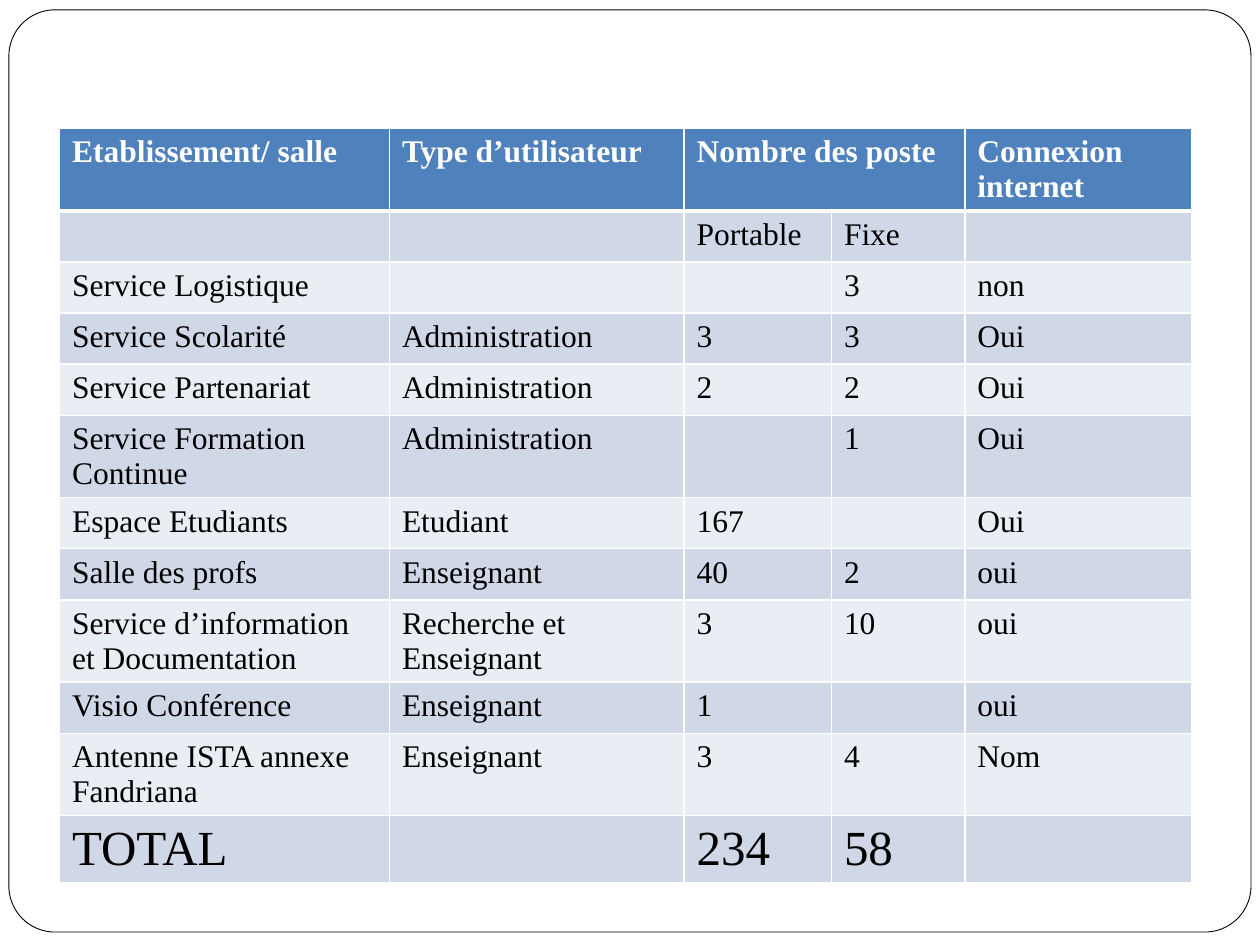
from dataclasses import dataclass

from lxml import etree
from pptx import Presentation
from pptx.dml.color import RGBColor
from pptx.enum import shapes
from pptx.oxml import ns
from pptx.util import Cm, Pt

WHITE = RGBColor(0xFF, 0xFF, 0xFF)
BLACK = RGBColor(0, 0, 0)
HEADER_BLUE = RGBColor(0x4F, 0x81, 0xBD)
BAND_DARK = RGBColor(0xD0, 0xD8, 0xE8)
BAND_LIGHT = RGBColor(0xE9, 0xED, 0xF4)

COLUMN_WIDTHS = (6.65, 5.94, 2.97, 2.69, 4.57)
ROW_HEIGHT = 1.03
THIN, THICK = 1, 3

ROWS = (
    ("Etablissement/ salle", "Type d’utilisateur", "Nombre des poste", "", "Connexion internet"),
    ("", "", "Portable", "Fixe", ""),
    ("Service Logistique", "", "", "3", "non"),
    ("Service Scolarité", "Administration", "3", "3", "Oui"),
    ("Service Partenariat", "Administration", "2", "2", "Oui"),
    ("Service Formation Continue", "Administration", "", "1", "Oui"),
    ("Espace Etudiants", "Etudiant", "167", "", "Oui"),
    ("Salle des profs", "Enseignant", "40", "2", "oui"),
    ("Service d’information et Documentation", "Recherche et Enseignant", "3", "10", "oui"),
    ("Visio Conférence", "Enseignant", "1", "", "oui"),
    ("Antenne ISTA annexe Fandriana", "Enseignant", "3", "4", "Nom"),
    ("TOTAL", "", "234", "58", ""),
)


@dataclass(frozen=True)
class RowStyle:
    fill: RGBColor
    color: RGBColor = BLACK
    size: int = 18
    bold: bool = False
    top: int = THIN
    bottom: int = THIN


def row_style(index: int) -> RowStyle:
    if index == 0:
        return RowStyle(HEADER_BLUE, WHITE, bold=True, bottom=THICK)
    if index == len(ROWS) - 1:
        return RowStyle(BAND_DARK, size=28)
    return RowStyle(BAND_DARK if index % 2 else BAND_LIGHT,
                    top=THICK if index == 1 else THIN)


def add_borders(cell, style: RowStyle) -> None:
    """Give the cell white edges; call before the fill, which must follow them."""
    properties = cell._tc.get_or_add_tcPr()
    widths = {"lnL": THIN, "lnR": THIN, "lnT": style.top, "lnB": style.bottom}
    for edge, width in widths.items():
        line = etree.SubElement(properties, ns.qn(f"a:{edge}"), w=str(Pt(width)))
        fill = etree.SubElement(line, ns.qn("a:solidFill"))
        etree.SubElement(fill, ns.qn("a:srgbClr"), val=str(WHITE))


def format_cell(cell, content: str, style: RowStyle) -> None:
    add_borders(cell, style)
    cell.fill.solid()
    cell.fill.fore_color.rgb = style.fill
    if not content:
        return
    cell.text = content
    font = cell.text_frame.paragraphs[0].runs[0].font
    font.color.rgb = style.color
    formats = {"name": "Times New Roman", "size": Pt(style.size), "bold": style.bold}
    for name, value in formats.items():
        setattr(font, name, value)


def add_frame(slide) -> None:
    frame = slide.shapes.add_shape(shapes.MSO_SHAPE.ROUNDED_RECTANGLE,
                                   Cm(0.18), Cm(0.2), Cm(25.04), Cm(18.59))
    frame.adjustments[0] = 0.05
    frame.shadow.inherit = False
    frame.fill.solid()
    frame.fill.fore_color.rgb = WHITE
    frame.line.color.rgb = BLACK
    frame.line.width = Pt(0.5)


def add_equipment_table(slide) -> None:
    table = slide.shapes.add_table(
        len(ROWS), len(COLUMN_WIDTHS), Cm(1.2), Cm(2.59),
        Cm(sum(COLUMN_WIDTHS)), Cm(ROW_HEIGHT * len(ROWS))).table
    for column, width in zip(table.columns, COLUMN_WIDTHS):
        column.width = Cm(width)
    for index, contents in enumerate(ROWS):
        table.rows[index].height = Cm(ROW_HEIGHT)
        for cell, content in zip(table.rows[index].cells, contents):
            format_cell(cell, content, row_style(index))
    table.cell(0, 2).merge(table.cell(0, 3))


def main() -> None:
    presentation = Presentation()
    presentation.slide_width, presentation.slide_height = Cm(25.4), Cm(19.05)
    slide = presentation.slides.add_slide(presentation.slide_layouts[6])
    add_frame(slide)
    add_equipment_table(slide)
    presentation.save("out.pptx")


if __name__ == "__main__":
    main()
